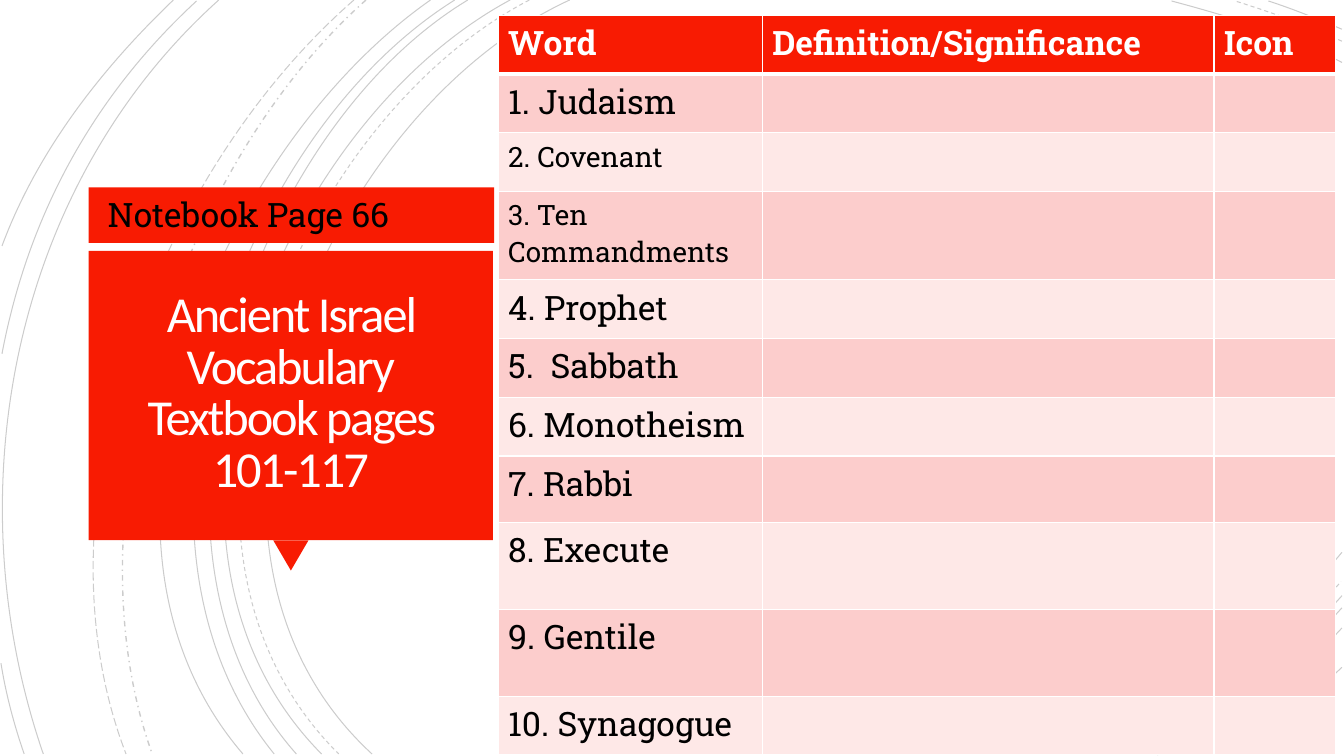
from lxml.etree import SubElement
from pptx import Presentation
from pptx.dml.color import RGBColor
from pptx.enum.dml import MSO_LINE
from pptx.enum.shapes import MSO_SHAPE
from pptx.enum.text import MSO_ANCHOR, PP_ALIGN
from pptx.oxml.ns import qn
from pptx.util import Cm, Pt

RED, WHITE, BLACK = "F81B02", "FFFFFF", "000000"
BANDS = "FCCDCC", "FEE8E7"
SLAB = "Roboto Slab"

TITLE = "Ancient Israel Vocabulary\nTextbook pages 101-117"
PAGE = "Notebook Page 66"
HEADS = ["Word", "Definition/Significance", "Icon"]
LOW = 1.48
# word, text size, row height in centimetres
WORDS = [
    ("1. Judaism", 24, LOW),
    ("2. Covenant", 20, LOW),
    ("3. Ten Commandments", 20, 2.23),
    ("4. Prophet", 24, LOW),
    ("5.  Sabbath", 24, LOW),
    ("6. Monotheism", 24, LOW),
    ("7. Rabbi", 24, 1.67),
    ("8. Execute", 24, 2.19),
    ("9. Gentile", 24, 2.19),
    ("10. Synagogue", 24, LOW),
]
COLS = [2.62, 4.48, 1.21]

SOLID, DASH = MSO_LINE.SOLID, MSO_LINE.DASH
# start, two control points, end, dash; all in inches
ARCS = [
    ((5.65, 0), (3.15, 1.15), (1.43, 5.4), (3.69, 7.48), SOLID),
    ((13.31, 0.62), (12.78, 0.34), (12.18, 0.16), (11.62, 0.01), SOLID),
    ((11.21, 7.48), (11.97, 6.9), (12.69, 6.22), (13.31, 5.48), SOLID),
    ((5.25, 0), (2.85, 1.25), (1.23, 5.37), (3.36, 7.48), DASH),
    ((13.31, 0.41), (12.97, 0.25), (12.6, 0.12), (12.25, 0.01), DASH),
    ((11.48, 7.49), (12.13, 6.98), (12.75, 6.4), (13.3, 5.77), DASH),
    ((5.06, 0), (2.7, 1.27), (1.1, 5.37), (3.19, 7.48), SOLID),
    ((13.31, 0.29), (13.07, 0.19), (12.83, 0.09), (12.58, 0.01), SOLID),
    ((11.64, 7.48), (12.23, 7.01), (12.8, 6.48), (13.31, 5.91), SOLID),
    ((4.64, 0), (2.44, 1.33), (1.1, 5.41), (2.94, 7.48), SOLID),
    ((11.81, 7.48), (12.34, 7.04), (12.84, 6.55), (13.31, 6.03), SOLID),
    ((4.51, 0), (2.31, 1.38), (0.97, 5.33), (2.72, 7.48), SOLID),
    ((12.01, 7.48), (12.46, 7.09), (12.9, 6.67), (13.31, 6.23), SOLID),
    ((4.27, 0), (2.17, 1.47), (0.53, 5.29), (2.41, 7.48), SOLID),
    ((12.34, 7.48), (12.67, 7.21), (12.99, 6.92), (13.31, 6.62), SOLID),
    ((3.63, 0), (1.76, 1.66), (0.65, 5.09), (1.51, 7.48), MSO_LINE.DASH_DOT),
    ((3.51, 0), (1.57, 1.69), (0.29, 4.99), (1.25, 7.48), MSO_LINE.LONG_DASH),
    ((2.17, 0), (0.11, 1.85), (-0.46, 4.9), (0.43, 7.48), SOLID),
    ((1.95, 0.01), (0.92, 0.96), (0.28, 2.14), (0.02, 3.51), SOLID),
    ((0.01, 6.58), (0.06, 6.89), (0.14, 7.19), (0.24, 7.48), SOLID),
    ((1.72, 0), (1, 0.69), (0.37, 1.5), (0.02, 2.44), SOLID),
]


def size(*inches):
    """Turn inches into lengths."""
    return [Cm(2.54 * n) for n in inches]


def tint(fill, code):
    fill.solid()
    fill.fore_color.rgb = RGBColor.from_string(code)


def write(frame, text, pts=24, face=SLAB, color=BLACK, bold=False,
          align=PP_ALIGN.LEFT, lead=None, track=0):
    para = frame.paragraphs[0]
    para.text = text
    para.alignment = align
    para.line_spacing = lead
    for run in para.runs:
        font = run.font
        font.size, font.name, font.bold = Pt(pts), face, bold
        tint(font.fill, color)
        if track:
            font._element.set("spc", str(int(track * 100)))


def label(box, text, inset=None, **style):
    frame = slide.shapes.add_textbox(*size(*box)).text_frame
    frame.word_wrap = True
    if inset:
        frame.vertical_anchor = MSO_ANCHOR.MIDDLE
        frame.margin_left, frame.margin_top = size(inset, inset)
        frame.margin_right, frame.margin_bottom = size(inset, inset)
    write(frame, text, **style)


def arc(*dots, dash):
    """Draw one cubic curve; its box holds the control points."""
    start, *rest = [size(*dot) for dot in dots]
    draft = slide.shapes.build_freeform(*start)
    draft.add_line_segments(rest, close=False)
    shape = draft.convert_to_shape()
    shape.shadow.inherit = False
    shape.fill.background()
    tint(shape.line.fill, BLACK)
    shape.line.width = Pt(1 if dash == MSO_LINE.DASH_DOT else 0.75)
    shape.line.dash_style = dash
    props = shape._element.spPr
    track = next(props.iter(qn("a:path")))
    bend = SubElement(track, qn("a:cubicBezTo"))
    for leg in track.findall(qn("a:lnTo")):
        bend.append(leg[0])
        track.remove(leg)
    hue = next(props.iter(qn("a:srgbClr")))
    SubElement(hue, qn("a:alpha"), val="20000")


def block(kind, box, turn=0):
    shape = slide.shapes.add_shape(kind, *size(*box))
    shape.shadow.inherit = False
    shape.rotation = turn
    tint(shape.fill, RED)
    shape.line.fill.background()


def edge(cell, row):
    """Give a cell white borders, thick below the head row."""
    thick = {"T": row == 1, "B": row == 0}
    for side in "LRTB":
        line = SubElement(cell._tc.get_or_add_tcPr(), qn("a:ln" + side),
                          w=str(Pt(3 if thick.get(side) else 1)))
        SubElement(SubElement(line, qn("a:solidFill")), qn("a:srgbClr"), val=WHITE)


def grid(left, top):
    talls = [LOW] + [tall for _, _, tall in WORDS]
    table = slide.shapes.add_table(
        len(talls), len(COLS), *size(left, top, sum(COLS)), Cm(sum(talls))).table
    for col, wide in zip(table.columns, size(*COLS)):
        col.width = wide
    for r, tall in enumerate(talls):
        table.rows[r].height = Cm(tall)
        for c, head in enumerate(HEADS):
            cell = table.cell(r, c)
            edge(cell, r)
            tint(cell.fill, BANDS[(r - 1) % 2] if r else RED)
            if r == 0:
                write(cell.text_frame, head, color=WHITE, bold=True)
            elif c == 0:
                word, pts, _ = WORDS[r - 1]
                write(cell.text_frame, word, pts=pts)


deck = Presentation()
deck.slide_width, deck.slide_height = size(13.33, 7.5)
slide = deck.slides.add_slide(deck.slide_layouts[6])
tint(slide.background.fill, WHITE)
for *dots, dash in ARCS:
    arc(*dots, dash=dash)
block(MSO_SHAPE.RECTANGLE, (0.88, 1.86, 4.02, 0.55))
block(MSO_SHAPE.ISOSCELES_TRIANGLE, (2.71, 5.36, 0.35, 0.3), turn=180)
block(MSO_SHAPE.RECTANGLE, (0.88, 2.49, 4.01, 2.87))
label((0.97, 2.57, 3.83, 2.69), TITLE, inset=0.25, pts=36, face="Calibri",
      color="FFFEFF", align=PP_ALIGN.CENTER, lead=0.85, track=-1.5)
grid(4.94, 0.15)
label((0.97, 1.87, 3.83, 0.5), PAGE)
deck.save("out.pptx")
